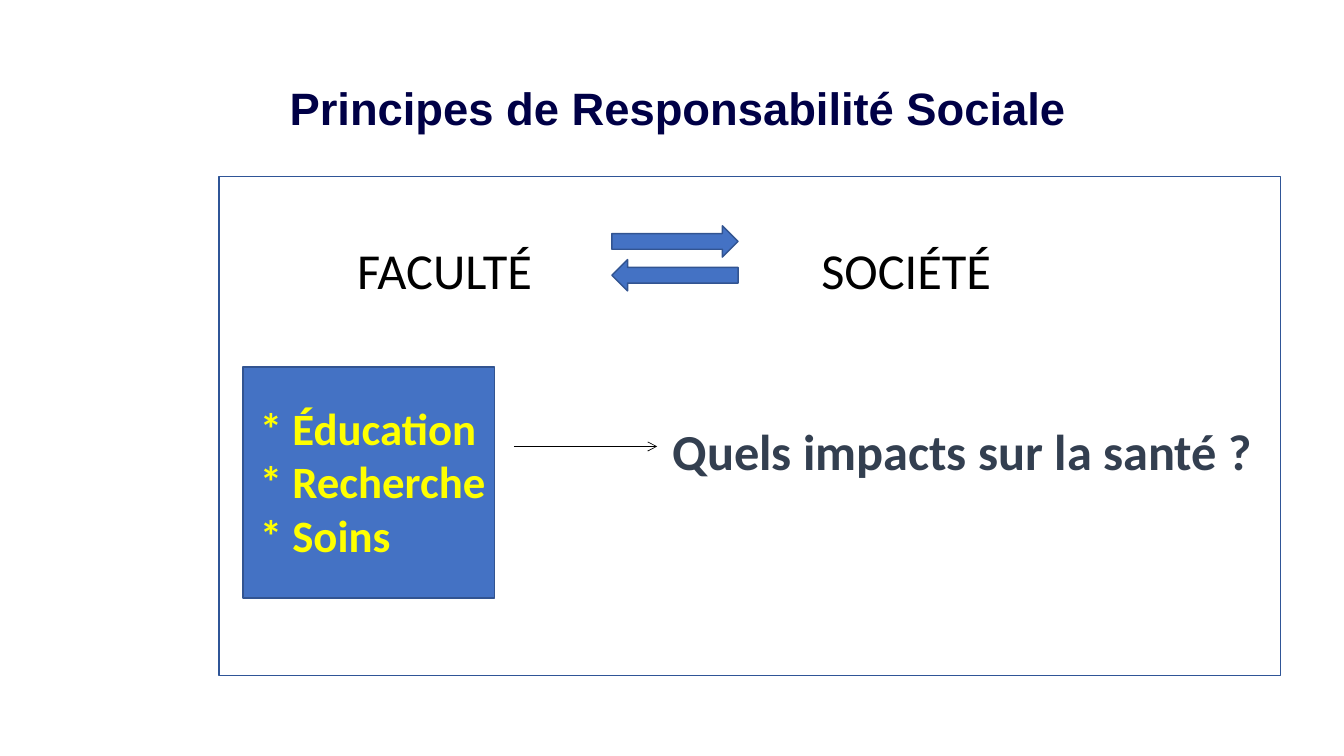
from lxml.etree import SubElement
from pptx import Presentation
from pptx.dml.color import RGBColor
from pptx.enum.shapes import MSO_CONNECTOR, MSO_SHAPE
from pptx.enum.text import MSO_ANCHOR, PP_ALIGN
from pptx.oxml.ns import qn
from pptx.util import Cm, Pt

COLORS = {
    "title": "000046",
    "text": "000000",
    "question": "333F50",
    "mission": "FFFF00",
    "fill": "4472C4",
    "border": "325491",
    "frame": "2F5597",
}


def rgb(name):
    return RGBColor.from_string(COLORS[name])


class SlideBuilder:
    def __init__(self, slide, font="Calibri"):
        self.shapes = slide.shapes
        self.font = font

    def shape(self, kind, left, top, width, height, border, weight, fill=None, rotation=0):
        shape = self.shapes.add_shape(kind, Cm(left), Cm(top), Cm(width), Cm(height))
        shape.shadow.inherit = False
        shape.rotation = rotation
        if fill:
            shape.fill.solid()
            shape.fill.fore_color.rgb = rgb(fill)
        else:
            shape.fill.background()
        shape.line.color.rgb = rgb(border)
        shape.line.width = Pt(weight)

    def text(self, lines, left, middle, width, height, size, color, bold=False, font=None):
        """Place left-aligned lines, centred vertically on middle."""
        box = self.shapes.add_textbox(Cm(left), Cm(middle - height / 2), Cm(width), Cm(height))
        frame = box.text_frame
        frame.word_wrap = True
        frame.vertical_anchor = MSO_ANCHOR.MIDDLE
        frame.margin_left = frame.margin_right = frame.margin_top = frame.margin_bottom = 0
        for index, line in enumerate(lines):
            paragraph = frame.add_paragraph() if index else frame.paragraphs[0]
            paragraph.alignment = PP_ALIGN.LEFT
            run = paragraph.add_run()
            run.text = line
            run.font.name = font or self.font
            run.font.size = Pt(size)
            run.font.bold = bold
            run.font.color.rgb = rgb(color)

    def arrow(self, start_x, end_x, y, color, weight):
        line = self.shapes.add_connector(
            MSO_CONNECTOR.STRAIGHT, Cm(start_x), Cm(y), Cm(end_x), Cm(y))
        line.line.color.rgb = rgb(color)
        line.line.width = Pt(weight)
        SubElement(line.line._get_or_add_ln(), qn("a:tailEnd"), type="arrow")
        SubElement(line._element.spPr, qn("a:effectLst"))


def main():
    presentation = Presentation()
    presentation.slide_width = Cm(33.87)
    presentation.slide_height = Cm(19.05)
    builder = SlideBuilder(presentation.slides.add_slide(presentation.slide_layouts[6]))

    builder.text(["Principes de Responsabilité Sociale"], 7.3, 2.7, 20.8, 1.6,
                 32.4, "title", bold=True, font="Arial")
    builder.shape(MSO_SHAPE.RECTANGLE, 5.52, 4.45, 26.75, 12.57, "frame", 0.75)

    for partner, left in (("FACULTÉ", 9), ("SOCIÉTÉ", 20.7)):
        builder.text([partner], left, 6.8, 5.5, 1.6, 36, "text")
    for top, rotation in ((5.69, 0), (6.54, 180)):
        builder.shape(MSO_SHAPE.RIGHT_ARROW, 15.42, top, 3.18, 0.79,
                      "border", 1, "fill", rotation)

    builder.shape(MSO_SHAPE.RECTANGLE, 6.12, 9.25, 6.35, 5.82, "border", 1, "fill")
    builder.text(["* Éducation", "* Recherche", "* Soins"], 6.55, 12.12, 7, 4.36,
                 32, "mission", bold=True)

    builder.arrow(12.95, 16.56, 11.25, "text", 0.5)
    builder.text(["Quels impacts sur la santé ?"], 16.95, 11.36, 15.3, 1.6,
                 36, "question", bold=True)

    presentation.save("out.pptx")


if __name__ == "__main__":
    main()
